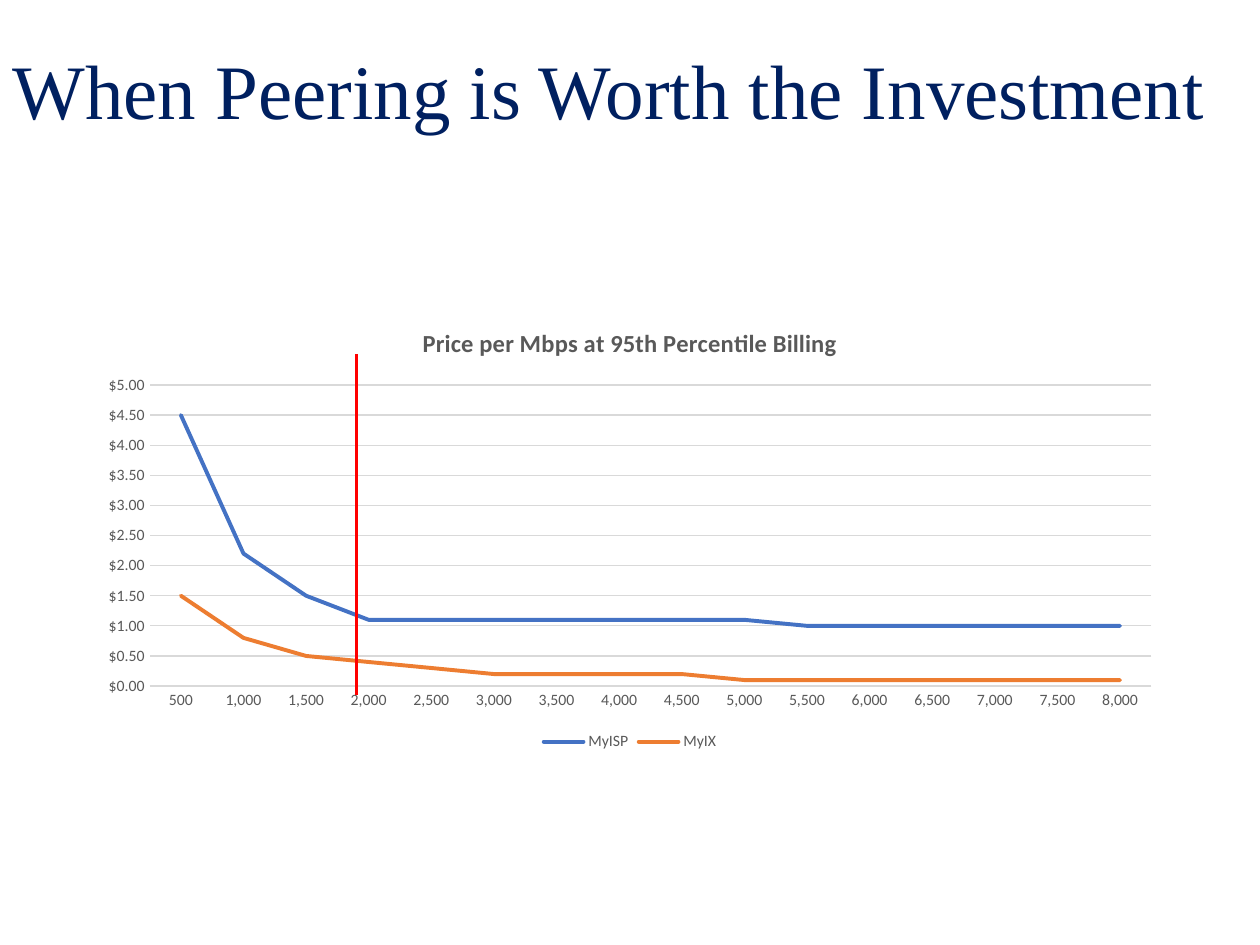
from lxml import etree
from pptx import Presentation
from pptx.chart.data import CategoryChartData
from pptx.dml.color import RGBColor
from pptx.enum.chart import XL_CHART_TYPE, XL_LEGEND_POSITION, XL_TICK_MARK
from pptx.enum.shapes import MSO_CONNECTOR
from pptx.enum.text import MSO_ANCHOR, PP_ALIGN
from pptx.oxml.ns import qn
from pptx.util import Inches, Pt

TITLE = "When Peering is Worth the Investment"
CHART_TITLE = "Price per Mbps at 95th Percentile Billing"
TRAFFIC_MBPS = range(500, 8001, 500)
PRICES = [
    ("MyISP", "4472C4", [4.5, 2.2, 1.5, 1.1, 1.1, 1.1, 1.1, 1.1,
                         1.1, 1.1, 1, 1, 1, 1, 1, 1]),
    ("MyIX", "ED7D31", [1.5, 0.8, 0.5, 0.4, 0.3, 0.2, 0.2, 0.2,
                        0.2, 0.1, 0.1, 0.1, 0.1, 0.1, 0.1, 0.1]),
]
GREY, GRID = "595959", "D9D9D9"


def set_font(font, name, size, color, bold=False):
    font.name, font.size, font.bold = name, Pt(size), bold
    font.color.rgb = RGBColor.from_string(color)


def set_line(line, color, width):
    line.color.rgb = RGBColor.from_string(color)
    line.width = Pt(width)


def add_title(slide):
    title = slide.shapes.title
    title.left, title.top = Inches(0), Inches(0)
    title.width, title.height = Inches(10.09), Inches(1.5)
    frame = title.text_frame
    frame.text = TITLE
    frame.vertical_anchor = MSO_ANCHOR.MIDDLE
    paragraph = frame.paragraphs[0]
    paragraph.alignment = PP_ALIGN.LEFT
    paragraph.line_spacing = 0.9
    set_font(paragraph.runs[0].font, "Times New Roman", 44, "002060")


def add_price_chart(slide):
    data = CategoryChartData(number_format='"$"#,##0.00')
    data.categories = TRAFFIC_MBPS
    data.categories.number_format = "#,##0"
    for name, _, values in PRICES:
        data.add_series(name, values)
    chart = slide.shapes.add_chart(
        XL_CHART_TYPE.LINE, Inches(0.69), Inches(2.43),
        Inches(8.62), Inches(3.57), data).chart
    set_font(chart.font, "Calibri", 10, "000000")

    chart.has_title = True
    chart.chart_title.include_in_layout = False
    chart.chart_title.text_frame.text = CHART_TITLE
    title_run = chart.chart_title.text_frame.paragraphs[0].runs[0]
    set_font(title_run.font, "Calibri", 14, GREY, bold=True)

    chart.has_legend = True
    chart.legend.position = XL_LEGEND_POSITION.BOTTOM
    chart.legend.include_in_layout = False
    set_font(chart.legend.font, "Calibri", 9, GREY)

    for axis, number_format in ((chart.category_axis, "#,##0"),
                                (chart.value_axis, '"$"#,##0.00')):
        axis.major_tick_mark = axis.minor_tick_mark = XL_TICK_MARK.NONE
        axis.tick_labels.number_format = number_format
        axis.tick_labels.number_format_is_linked = False
        set_font(axis.tick_labels.font, "Calibri", 9, GREY)
    set_line(chart.category_axis.format.line, GRID, 0.75)
    prices = chart.value_axis
    prices.minimum_scale, prices.maximum_scale, prices.major_unit = 0, 5, 0.5
    prices.format.line.fill.background()
    set_line(prices.major_gridlines.format.line, GRID, 0.75)

    plot = chart.plots[0]
    plot.vary_by_categories = False
    for series, (_, color, _) in zip(plot.series, PRICES):
        series.smooth = False
        set_line(series.format.line, color, 2.25)
        series._element.spPr.find(qn("a:ln")).set("cap", "rnd")


def add_break_even_line(slide):
    line = slide.shapes.add_connector(
        MSO_CONNECTOR.STRAIGHT, Inches(2.83), Inches(5.52), Inches(2.83), Inches(2.81))
    set_line(line.line, "FF0000", 1.5)
    etree.SubElement(line._element.spPr, qn("a:effectLst"))


def main():
    presentation = Presentation()
    presentation.slide_width, presentation.slide_height = Inches(10), Inches(7.5)
    slide = presentation.slides.add_slide(presentation.slide_layouts.get_by_name("Title Only"))
    add_title(slide)
    add_price_chart(slide)
    add_break_even_line(slide)
    presentation.save("out.pptx")


if __name__ == "__main__":
    main()
